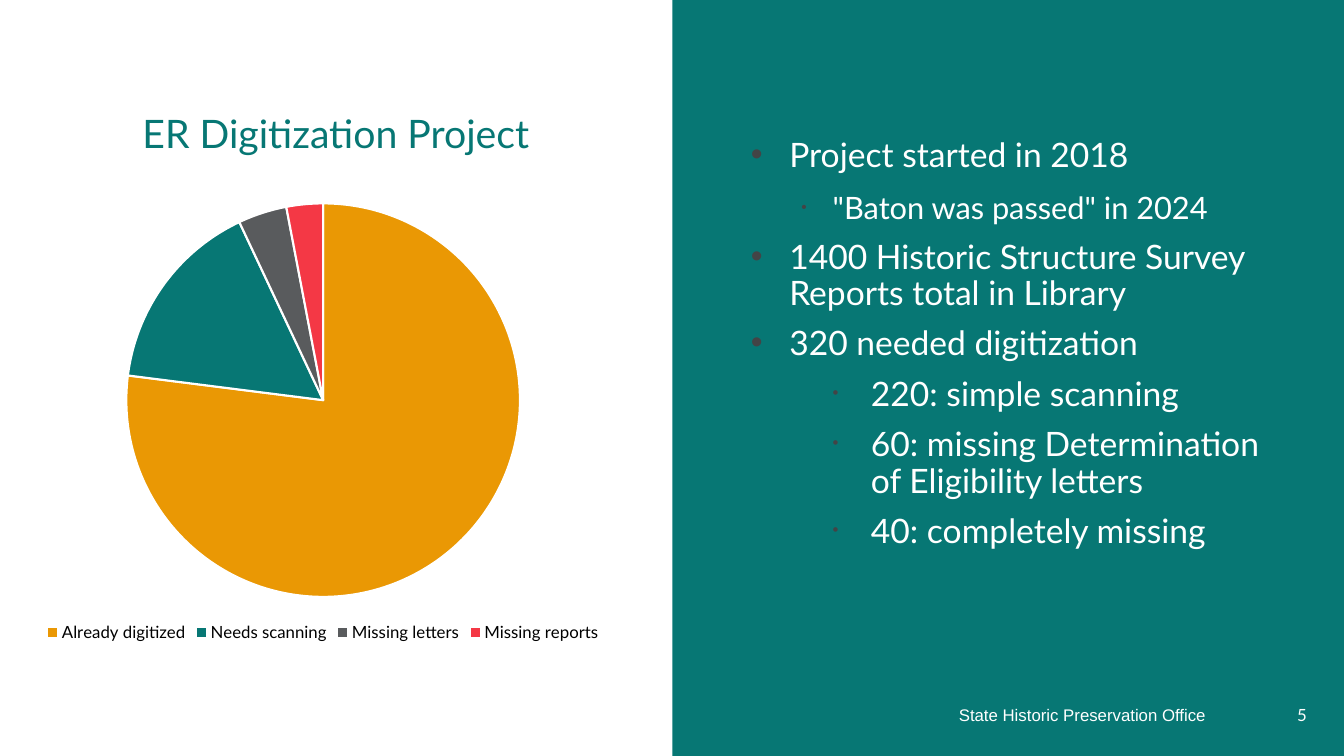
from dataclasses import dataclass

from lxml.etree import SubElement
from pptx import Presentation
from pptx.chart.data import CategoryChartData
from pptx.dml.color import RGBColor
from pptx.enum.chart import XL_CHART_TYPE, XL_LEGEND_POSITION
from pptx.enum.shapes import MSO_SHAPE
from pptx.enum.text import MSO_ANCHOR, PP_ALIGN
from pptx.oxml.ns import qn
from pptx.util import Inches, Pt


@dataclass(frozen=True)
class Theme:
    """Colours, fonts and type sizes of the slide."""

    teal: str = "077774"
    white: str = "FFFFFF"
    black: str = "000000"
    bullet: str = "434446"
    slices: tuple = ("EA9804", "077774", "595B5D", "F43845")
    font: str = "Lato"
    footer_font: str = "Arial"
    title_size: int = 28
    body_size: int = 24
    note_size: int = 22
    small_size: int = 12


@dataclass(frozen=True)
class BulletStyle:
    """Indents and type of one kind of bullet, in inches and points."""

    level: int
    margin: float
    hanging: float
    size: int
    bullet_percent: int
    line_spacing: int | None = 26


THEME = Theme()
MAIN = BulletStyle(0, 0.38, 0.38, THEME.body_size, 100)
NOTE = BulletStyle(1, 0.81, 0.31, THEME.note_size, 50, None)
DETAIL = BulletStyle(1, 1.19, 0.38, THEME.body_size, 50)

BULLETS = (
    (MAIN, "Project started in 2018"),
    (NOTE, '"Baton was passed" in 2024'),
    (MAIN, "1400 Historic Structure Survey Reports total in Library"),
    (MAIN, "320 needed digitization"),
    (DETAIL, "220: simple scanning"),
    (DETAIL, "60: missing Determination of Eligibility letters"),
    (DETAIL, "40: completely missing"),
)

REPORT_SHARES = {
    "Already digitized": 77,
    "Needs scanning": 16,
    "Missing letters": 4,
    "Missing reports": 3,
}


def style_font(font, size, color, name=THEME.font):
    """Set the size, colour and typeface of a font."""
    font.size = Pt(size)
    font.color.rgb = RGBColor.from_string(color)
    font.name = name


def add_run(paragraph, text, size, color, name=THEME.font):
    """Append a styled run to a paragraph."""
    run = paragraph.add_run()
    run.text = text
    style_font(run.font, size, color, name)


def add_text_frame(slide, box, anchor):
    """Add a wrapping text box and return its text frame."""
    shape = slide.shapes.add_textbox(*map(Inches, box))
    frame = shape.text_frame
    frame.word_wrap = True
    frame.vertical_anchor = anchor
    return frame


def add_label(slide, box, text, alignment, size, color, name=THEME.font):
    """Add a single line of vertically centred text."""
    paragraph = add_text_frame(slide, box, MSO_ANCHOR.MIDDLE).paragraphs[0]
    paragraph.alignment = alignment
    add_run(paragraph, text, size, color, name)


def add_panel(slide, box, color):
    """Add a plain filled rectangle."""
    shape = slide.shapes.add_shape(MSO_SHAPE.RECTANGLE, *map(Inches, box))
    shape.shadow.inherit = False
    shape.fill.solid()
    shape.fill.fore_color.rgb = RGBColor.from_string(color)
    shape.line.fill.background()


def set_bullet(paragraph, style):
    """Give a paragraph its level, hanging indent and bullet."""
    paragraph.level = style.level
    properties = paragraph._p.get_or_add_pPr()
    properties.set("marL", str(Inches(style.margin)))
    properties.set("indent", str(-Inches(style.hanging)))
    color = SubElement(properties, qn("a:buClr"))
    SubElement(color, qn("a:srgbClr"), val=THEME.bullet)
    SubElement(properties, qn("a:buSzPct"), val=str(style.bullet_percent * 1000))
    SubElement(properties, qn("a:buFont"), typeface="Arial")
    SubElement(properties, qn("a:buChar"), char="•")


def add_bullets(slide, box, bullets):
    """Add a text box holding a bulleted list."""
    frame = add_text_frame(slide, box, MSO_ANCHOR.TOP)
    for index, (style, text) in enumerate(bullets):
        paragraph = frame.add_paragraph() if index else frame.paragraphs[0]
        set_bullet(paragraph, style)
        if style.line_spacing:
            paragraph.line_spacing = Pt(style.line_spacing)
        paragraph.space_before = Pt(10 if index else 0)
        add_run(paragraph, text, style.size, THEME.white)


def add_pie(slide, box, shares):
    """Add a pie chart with a legend below it."""
    data = CategoryChartData()
    data.categories = list(shares)
    data.add_series("Series 1", list(shares.values()))
    chart = slide.shapes.add_chart(
        XL_CHART_TYPE.PIE, *map(Inches, box), data
    ).chart
    chart.has_title = False
    style_font(chart.font, THEME.small_size, THEME.black)
    chart.has_legend = True
    chart.legend.position = XL_LEGEND_POSITION.BOTTOM
    chart.legend.include_in_layout = False
    style_font(chart.legend.font, THEME.small_size, THEME.black)
    plot = chart.plots[0]
    plot.vary_by_categories = True
    for index, color in enumerate(THEME.slices):
        point_format = plot.series[0].points[index].format
        point_format.fill.solid()
        point_format.fill.fore_color.rgb = RGBColor.from_string(color)
        point_format.line.color.rgb = RGBColor.from_string(THEME.white)
        point_format.line.width = Pt(1.5)


def main():
    """Build the slide and save it."""
    presentation = Presentation()
    presentation.slide_width = Inches(13.33)
    presentation.slide_height = Inches(7.5)
    slide = presentation.slides.add_slide(presentation.slide_layouts[6])
    add_panel(slide, (6.67, 0, 6.66, 7.5), THEME.teal)
    add_label(slide, (7.2, 6.89, 4.86, 0.4), "State Historic Preservation Office",
              PP_ALIGN.RIGHT, THEME.small_size, THEME.white, THEME.footer_font)
    add_label(slide, (12.06, 6.89, 1, 0.4), "5",
              PP_ALIGN.RIGHT, THEME.small_size, THEME.white)
    add_label(slide, (0.53, 0.91, 5.6, 0.81), "ER Digitization Project",
              PP_ALIGN.CENTER, THEME.title_size, THEME.teal)
    add_bullets(slide, (7.35, 1.32, 5.32, 4.82), BULLETS)
    add_pie(slide, (-0.13, 1.88, 6.67, 4.53), REPORT_SHARES)
    presentation.save("out.pptx")


if __name__ == "__main__":
    main()
